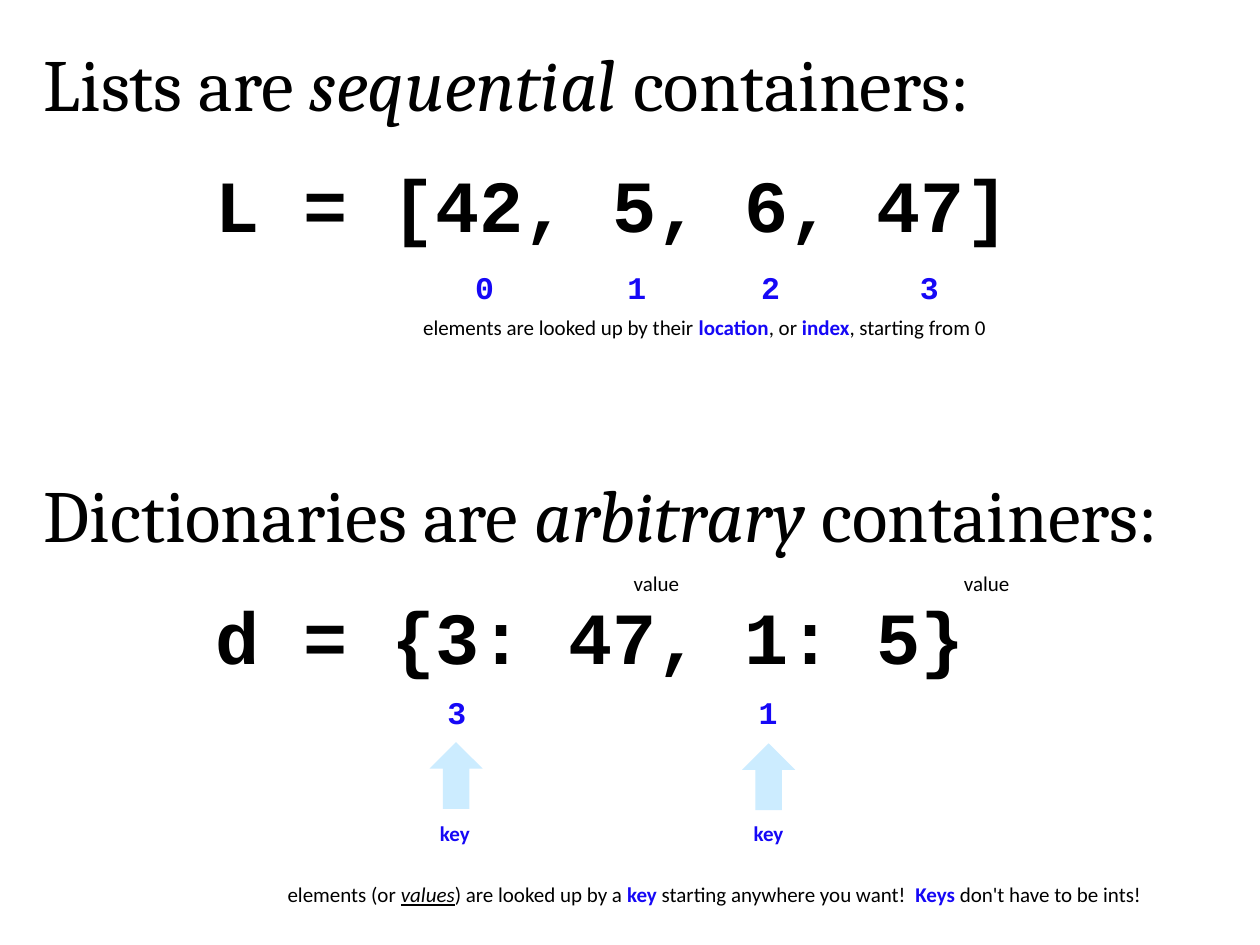
from pptx import Presentation
from pptx.dml.color import RGBColor
from pptx.enum import shapes, text
from pptx.util import Inches, Pt

COLORS = {"ink": "000000", "accent": "1608F6", "arrow": "CCECFF"}
HEADING, CODE, BODY = "Cambria", "Courier New", "Calibri"


def rgb(name):
    return RGBColor.from_string(COLORS[name])


class ContainerSlide:
    """Holds the current slide and draws each kind of element on it."""

    def __init__(self, slide):
        self.slide = slide

    def add_line(self, box, runs, font, size, color="ink", bold=False,
                 centered=False, wrap=True, line_spacing=None):
        """Runs are (words, style) pairs; style is "", "italic", "underlined" or "accent"."""
        frame = self.slide.shapes.add_textbox(*map(Inches, box)).text_frame
        frame.word_wrap = wrap
        frame.auto_size = text.MSO_AUTO_SIZE.SHAPE_TO_FIT_TEXT
        paragraph = frame.paragraphs[0]
        if centered:
            paragraph.alignment = text.PP_ALIGN.CENTER
        if line_spacing:
            paragraph.line_spacing = line_spacing
        paragraph.font.name = font
        paragraph.font.size = Pt(size)
        paragraph.font.bold = bold
        paragraph.font.color.rgb = rgb(color)
        for words, style in runs:
            run = paragraph.add_run()
            run.text = words
            if style in ("italic", "underlined"):
                run.font.italic = True
            if style == "underlined":
                run.font.underline = True
            if style == "accent":
                run.font.bold = True
                run.font.color.rgb = rgb("accent")

    def heading(self, top, width, kind, adjective):
        runs = [(f"{kind} are ", ""), (f"{adjective} ", "italic"), ("containers:", "")]
        self.add_line((0.25, top, width, 0.81), runs, HEADING, 42)

    def code(self, top, width, line):
        self.add_line((1.61, top, width, 0.74), [(line, "")], CODE, 42,
                      bold=True, line_spacing=0.9)

    def explanation(self, left, top, runs):
        self.add_line((left, top, 7.18, 0.28), runs, BODY, 12,
                      centered=True, line_spacing=0.9)

    def index(self, left, top, number):
        self.add_line((left, top, 0.35, 0.4), [(number, "")], CODE, 18,
                      "accent", bold=True, centered=True, wrap=False)

    def key_label(self, left, top):
        self.add_line((left, top, 0.44, 0.3), [("key", "")], BODY, 12,
                      "accent", bold=True, centered=True, wrap=False)

    def value_label(self, left, top):
        self.add_line((left, top, 0.58, 0.3), [("value", "")], BODY, 12,
                      centered=True, wrap=False)

    def up_arrow(self, left, top):
        arrow = self.slide.shapes.add_shape(
            shapes.MSO_SHAPE.UP_ARROW, *map(Inches, (left, top, 0.42, 0.53)))
        arrow.shadow.inherit = False
        arrow.fill.solid()
        arrow.fill.fore_color.rgb = rgb("arrow")
        arrow.line.fill.background()


def main():
    deck = Presentation()
    deck.slide_width, deck.slide_height = Inches(10), Inches(7.5)
    page = ContainerSlide(deck.slides.add_slide(deck.slide_layouts[6]))

    # Lists: code with the index under each element
    page.heading(0.25, 8.93, "Lists", "sequential")
    page.code(1.29, 7.47, "L = [42, 5, 6, 47]")
    for position, left in enumerate((3.67, 4.88, 5.94, 7.2)):
        page.index(left, 2.08, str(position))
    page.explanation(2, 2.47, [
        ("elements are looked up by their ", ""), ("location", "accent"),
        (", or ", ""), ("index", "accent"), (", starting from 0", "")])

    # Dictionaries: code with values above and keys below
    page.heading(3.67, 9.6, "Dictionaries", "arbitrary")
    page.code(4.72, 7.71, "d = {3: 47, 1: 5}")
    for key, key_left, arrow_left, arrow_top, label_left, value_left in (
            ("3", 3.45, 3.41, 5.89, 3.39, 4.92),
            ("1", 5.92, 5.89, 5.9, 5.88, 7.54)):
        page.index(key_left, 5.45, key)
        page.up_arrow(arrow_left, arrow_top)
        page.key_label(label_left, 6.46)
        page.value_label(value_left, 4.48)
    page.explanation(2.08, 6.97, [
        ("elements (or ", ""), ("values", "underlined"),
        (") are looked up by a ", ""), ("key ", "accent"),
        ("starting anywhere you want!  ", ""), ("Keys", "accent"),
        (" don't have to be ints!", "")])

    deck.save("out.pptx")


if __name__ == "__main__":
    main()
